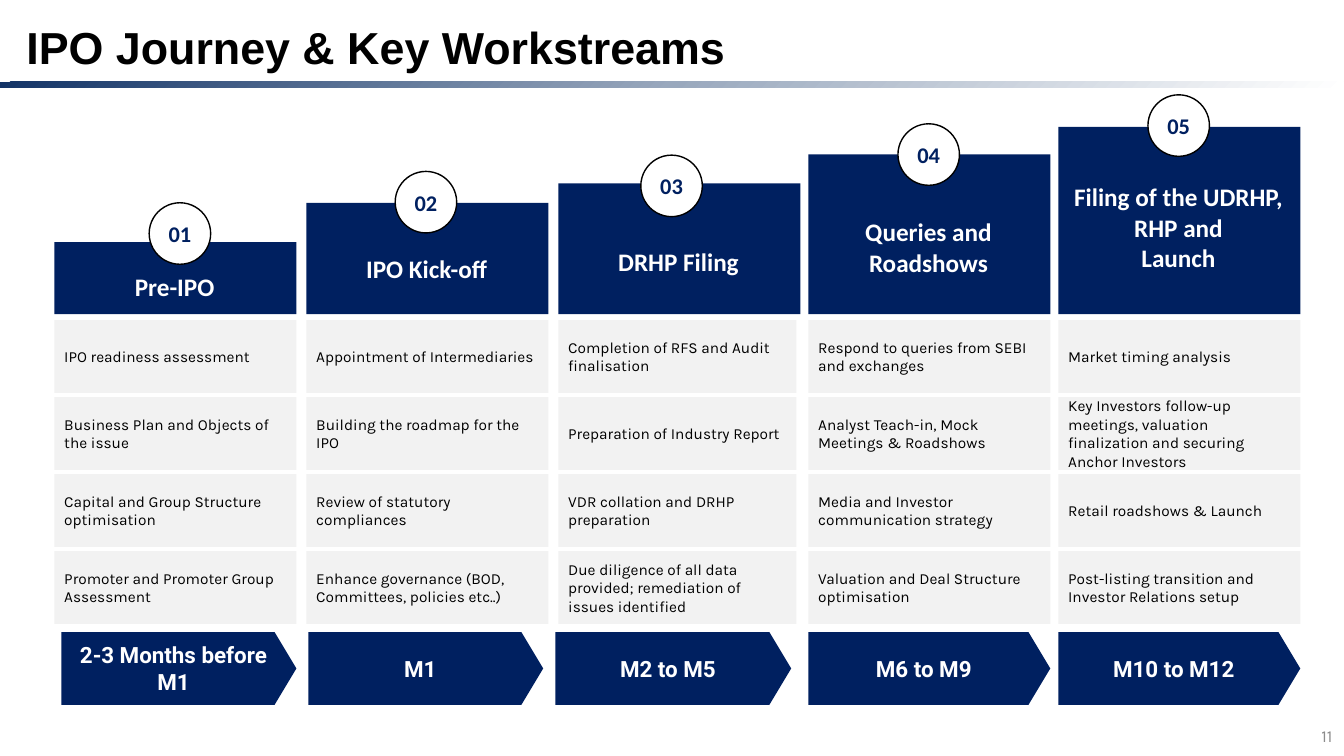
from lxml import etree
from pptx import Presentation
from pptx.dml.color import RGBColor
from pptx.enum.shapes import MSO_SHAPE
from pptx.enum.text import MSO_ANCHOR, MSO_AUTO_SIZE, PP_ALIGN
from pptx.oxml import parse_xml
from pptx.oxml.ns import nsdecls, qn
from pptx.util import Cm, Pt

RECTANGLE, OVAL, PENTAGON = MSO_SHAPE.RECTANGLE, MSO_SHAPE.OVAL, MSO_SHAPE.PENTAGON
MIDDLE, NO_FIT = MSO_ANCHOR.MIDDLE, MSO_AUTO_SIZE.NONE
LEFT, CENTER, RIGHT = PP_ALIGN.LEFT, PP_ALIGN.CENTER, PP_ALIGN.RIGHT
NAVY, GREY, WHITE, BLACK, MUTED = "002060", "F2F2F2", "FFFFFF", "000000", "8C8C8C"
SLIDE_WIDTH, SLIDE_HEIGHT = 33.87, 19.05
COLUMN_WIDTH, HEADER_BOTTOM = 6.1, 7.92
TASK_TOP, TASK_PITCH, TASK_HEIGHT = 8.07, 1.94, 1.83
TIMELINE_TOP, TIMELINE_HEIGHT, BADGE_SIZE = 15.93, 1.83, 1.55

STAGES = [
    {"left": 1.37, "top": 6.1, "badge": (3.76, 5.11), "heading": ["Pre-IPO"],
     "heading_middle": 7.21, "task_width": 6.1,
     "tasks": ["IPO readiness assessment", "Business Plan and Objects of the issue",
               "Capital and Group Structure optimisation",
               "Promoter and Promoter Group Assessment"],
     "period": "2-3 Months before M1", "arrow": (1.55, 5.92)},
    {"left": 7.72, "top": 5.11, "badge": (9.96, 4.32), "heading": ["IPO Kick-off"],
     "heading_middle": 6.77, "task_width": 6.1,
     "tasks": ["Appointment of Intermediaries", "Building the roadmap for the IPO",
               "Review of statutory compliances",
               "Enhance governance (BOD, Committees, policies etc..)"],
     "period": "M1", "arrow": (7.77, 5.92)},
    {"left": 14.07, "top": 4.62, "badge": (16.15, 3.91), "heading": ["DRHP Filing"],
     "heading_middle": 6.6, "task_width": 6,
     "tasks": ["Completion of RFS and Audit finalisation", "Preparation of Industry Report",
               "VDR collation and DRHP preparation",
               "Due diligence of all data provided; remediation of issues identified"],
     "period": "M2 to M5", "arrow": (14, 5.94)},
    {"left": 20.37, "top": 3.89, "badge": (22.63, 3.12), "heading": ["Queries and Roadshows"],
     "heading_middle": 6.22, "task_width": 6.1,
     "tasks": ["Respond to queries from SEBI and exchanges",
               "Analyst Teach-in, Mock Meetings & Roadshows",
               "Media and Investor communication strategy",
               "Valuation and Deal Structure optimisation"],
     "period": "M6 to M9", "arrow": (20.37, 6.1)},
    {"left": 26.67, "top": 3.2, "badge": (28.93, 2.39),
     "heading": ["Filing of the UDRHP, RHP and", "Launch"],
     "heading_middle": 5.72, "task_width": 6.1,
     "tasks": ["Market timing analysis",
               "Key Investors follow-up meetings, valuation finalization and securing "
               "Anchor Investors",
               "Retail roadshows & Launch",
               "Post-listing transition and Investor Relations setup"],
     "period": "M10 to M12", "arrow": (26.67, 6.1)},
]


def color(code):
    """Return the colour for a hex string."""
    return RGBColor.from_string(code)


def write(frame, lines, font, size, ink, bold=False, align=LEFT, inset=None):
    """Write lines as paragraphs, centred vertically in a text frame."""
    frame.word_wrap = True
    frame.auto_size = NO_FIT
    frame.vertical_anchor = MIDDLE
    if inset is not None:
        frame.margin_left = frame.margin_right = Cm(inset)
        frame.margin_top = frame.margin_bottom = Cm(inset)
    for index, line in enumerate(lines):
        paragraph = frame.add_paragraph() if index else frame.paragraphs[0]
        paragraph.alignment = align
        run = paragraph.add_run()
        run.text = line
        run.font.name, run.font.size, run.font.bold = font, Pt(size), bold
        run.font.color.rgb = color(ink)


def add_block(slide, kind, box, fill, outline=None):
    """Add a flat filled shape in a box given in centimetres."""
    block = slide.shapes.add_shape(kind, *map(Cm, box))
    block.shadow.inherit = False
    block.fill.solid()
    block.fill.fore_color.rgb = color(fill)
    if outline:
        block.line.color.rgb = color(outline)
        block.line.width = Pt(1)
    else:
        block.line.fill.background()
    return block


def add_label(slide, box, lines, *style, **layout):
    """Add a text box in a box given in centimetres."""
    label = slide.shapes.add_textbox(*map(Cm, box))
    write(label.text_frame, lines, *style, **layout)


def add_title_band(slide, left, top, width, height):
    """Place the slide title with a fading rule below it."""
    title = slide.shapes.title
    title.left, title.top = Cm(left + 0.41), Cm(top)
    title.width, title.height = Cm(width - 0.41), Cm(height)
    write(title.text_frame, ["IPO Journey & Key Workstreams"], "Arial", 32, BLACK, bold=True)

    rule = add_block(slide, RECTANGLE, (left, top + 2.06, width, 0.15), NAVY)
    gradient = parse_xml(f'<a:gradFill rotWithShape="1" {nsdecls("a")}><a:gsLst/></a:gradFill>')
    for position, code in ((0, "133467"), (50000, "99A8BD"), (100000, WHITE)):
        stop = etree.SubElement(gradient[0], qn("a:gs"), pos=str(position))
        etree.SubElement(stop, qn("a:srgbClr"), val=code)
    etree.SubElement(gradient, qn("a:lin"), ang="2700000", scaled="0")
    properties = rule._element.spPr
    properties.replace(properties.find(qn("a:solidFill")), gradient)


def add_header(slide, number, stage, left, top, width, height):
    """Place a stage header with its heading and numbered badge."""
    add_block(slide, RECTANGLE, (left, top, width, height), NAVY)
    heading_box = (left + 0.2, stage["heading_middle"] - 0.4, width - 0.44, 0.8)
    add_label(slide, heading_box, stage["heading"], "Calibri", 18, WHITE,
              bold=True, align=CENTER, inset=0)
    badge = add_block(slide, OVAL, (*stage["badge"], BADGE_SIZE, BADGE_SIZE), WHITE, BLACK)
    write(badge.text_frame, [f"{number:02}"], "Calibri", 16, NAVY,
          bold=True, align=CENTER, inset=0)


def add_tasks(slide, tasks, left, top, width):
    """Stack the task cells of a stage from the given top."""
    for row, task in enumerate(tasks):
        cell = add_block(slide, RECTANGLE,
                         (left, top + row * TASK_PITCH, width, TASK_HEIGHT), GREY)
        write(cell.text_frame, [task], "Karla", 11, BLACK)


def add_period(slide, period, left, top, width, height):
    """Place the timeline arrow of a stage."""
    arrow = add_block(slide, PENTAGON, (left, top, width, height), NAVY)
    arrow.adjustments[0] = 0.3
    write(arrow.text_frame, [period], "Roboto", 16, WHITE, bold=True, align=CENTER)


def add_stage(slide, number, stage):
    """Place one column of the journey."""
    left, top = stage["left"], stage["top"]
    add_header(slide, number, stage, left, top, COLUMN_WIDTH, HEADER_BOTTOM - top)
    add_tasks(slide, stage["tasks"], left, TASK_TOP, stage["task_width"])
    arrow_left, arrow_width = stage["arrow"]
    add_period(slide, stage["period"], arrow_left, TIMELINE_TOP, arrow_width, TIMELINE_HEIGHT)


def main():
    """Build and save the slide."""
    deck = Presentation()
    deck.slide_width, deck.slide_height = Cm(SLIDE_WIDTH), Cm(SLIDE_HEIGHT)
    slide = deck.slides.add_slide(deck.slide_layouts.get_by_name("Title Only"))
    add_title_band(slide, 0, 0, SLIDE_WIDTH, 2.34)
    for number, stage in enumerate(STAGES, 1):
        add_stage(slide, number, stage)
    add_label(slide, (26.21, 18.03, 7.62, 1.02), ["11"], "Karla", 12, MUTED, align=RIGHT)
    deck.save("out.pptx")


if __name__ == "__main__":
    main()
